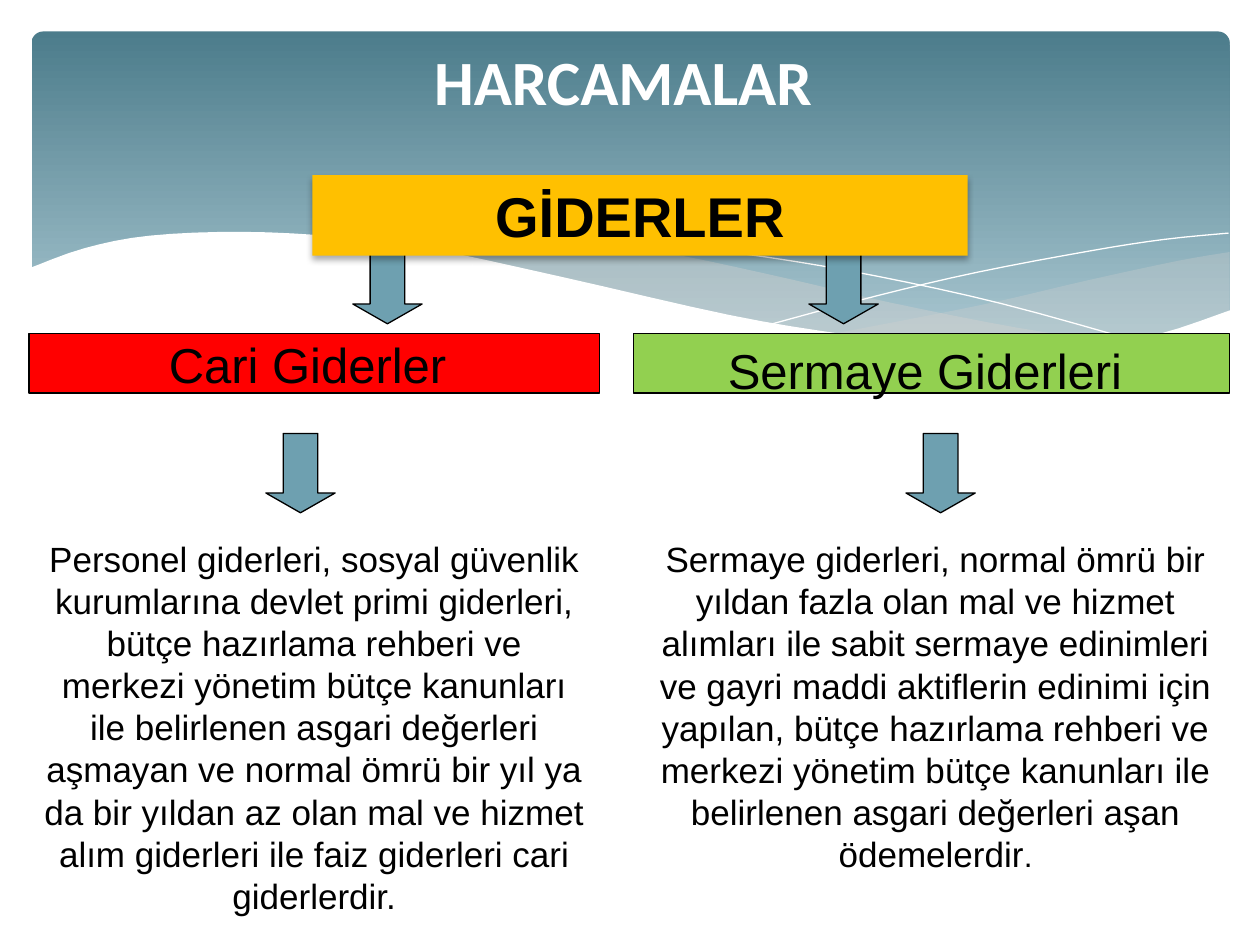
from dataclasses import dataclass

from lxml import etree
from pptx import Presentation
from pptx.dml.color import RGBColor
from pptx.enum.shapes import MSO_SHAPE
from pptx.enum.text import MSO_ANCHOR, PP_ALIGN
from pptx.oxml.ns import qn
from pptx.util import Inches, Pt

Point = tuple[float, float]
Area = tuple[float, float, float, float]


@dataclass(frozen=True)
class Theme:
    white: str = "FFFFFF"
    black: str = "000000"
    mist: str = "D4D2D0"
    dark: str = "4C7C8B"
    light: str = "A8C6D0"
    arrow: str = "6EA0B0"
    gold: str = "FFC000"
    red: str = "FF0000"
    green: str = "92D050"
    head: str = "Calibri"
    text: str = "Arial"
    title: float = 36
    banner: float = 32
    label: float = 28
    body: float = 20
    stop: float = 18
    line: float = 0.75


@dataclass(frozen=True)
class Wave:
    knots: list[Point]
    fill: str | None = None
    alpha: int = 100
    turn: int = 0  # knot index where the upper edge ends


@dataclass(frozen=True)
class Column:
    label: str
    box: Area
    fill: str
    anchor: MSO_ANCHOR
    body: str
    area: Area
    tail: str = ""


THEME = Theme()
ARROWS = [(2.11, 3.44), (7.19, 3.44), (2.8, 1.94), (6.42, 1.94)]
WAVES = [
    Wave([(9.76, 2), (9.35, 2.07), (8.61, 2.23), (7.79, 2.42), (6.61, 2.65),
          (7.32, 2.74), (8.03, 2.78), (8.63, 2.75), (9.21, 2.65), (9.76, 2.47)],
         THEME.mist, 29, 4),
    Wave([(8.93, 2.73), (8.07, 2.6), (7.06, 2.4), (6.29, 2.22), (5.41, 2.03),
          (4.65, 1.91), (3.8, 1.85), (2.86, 1.91), (3.62, 2.03), (4.49, 2.22),
          (5.66, 2.48), (6.65, 2.66), (7.48, 2.76), (8.18, 2.78), (8.93, 2.73)],
         THEME.mist, 40, 7),
    Wave([(3.09, 1.95), (3.63, 1.89), (4.33, 1.87), (5.1, 1.92), (6.08, 2.04),
          (6.95, 2.19), (7.95, 2.41), (9.07, 2.72)]),
    Wave([(6.13, 2.57), (6.95, 2.35), (7.76, 2.16), (8.66, 1.99), (9.24, 1.9), (9.75, 1.85)]),
    Wave([(9.77, 2.46), (9.2, 2.65), (8.63, 2.74), (8.09, 2.77), (7.44, 2.74),
          (6.68, 2.65), (5.79, 2.5), (4.47, 2.2), (3.4, 1.97), (2.71, 1.88),
          (1.93, 1.84), (1.19, 1.87), (0.67, 1.97), (0.23, 2.13), (0.23, 3.29), (9.77, 3.29)],
         THEME.white, 100, 13),
]
COLUMNS = [
    Column("Cari Giderler ", (0.23, 2.65, 4.53, 0.47), THEME.red, MSO_ANCHOR.MIDDLE,
           "Personel giderleri, sosyal güvenlik kurumlarına devlet primi giderleri, "
           "bütçe hazırlama rehberi ve merkezi yönetim bütçe kanunları ile belirlenen "
           "asgari değerleri aşmayan ve normal ömrü bir yıl ya da bir yıldan az olan mal "
           "ve hizmet alım giderleri ile faiz giderleri cari giderlerdir.",
           (0.23, 4.22, 4.53, 3.13)),
    Column("Sermaye Giderleri ", (5.03, 2.65, 4.73, 0.47), THEME.green, MSO_ANCHOR.TOP,
           "Sermaye giderleri, normal ömrü bir yıldan fazla olan mal ve hizmet alımları "
           "ile sabit sermaye edinimleri ve gayri maddi aktiflerin edinimi için yapılan, "
           "bütçe hazırlama rehberi ve merkezi yönetim bütçe kanunları ile belirlenen "
           "asgari değerleri aşan ödemelerdir",
           (5.08, 4.22, 4.69, 2.79), "."),
]


def rgb(code: str) -> RGBColor:
    return RGBColor.from_string(code)


def place(area: Area) -> list[int]:
    return [Inches(v) for v in area]


def write(shape, text: str, *, size: float, font: str = THEME.text, color: str = THEME.black,
          bold: bool = False, anchor: MSO_ANCHOR = MSO_ANCHOR.TOP) -> None:
    """Append a centred run to the shape's first paragraph."""
    frame = shape.text_frame
    frame.word_wrap = True
    frame.vertical_anchor = anchor
    para = frame.paragraphs[0]
    para.alignment = PP_ALIGN.CENTER
    run = para.add_run()
    run.text = text
    run.font.name, run.font.size, run.font.bold = font, Pt(size), bold
    run.font.color.rgb = rgb(color)


def paint(shape, fill: str | None, line: str | None = None, width: float = THEME.line) -> None:
    shape.shadow.inherit = False
    if fill:
        shape.fill.solid()
        shape.fill.fore_color.rgb = rgb(fill)
    else:
        shape.fill.background()
    if line:
        shape.line.color.rgb = rgb(line)
        shape.line.width = Pt(width)
    else:
        shape.line.fill.background()


def box(slide, kind: MSO_SHAPE, area: Area, fill: str, line: str | None = None):
    shape = slide.shapes.add_shape(kind, *place(area))
    paint(shape, fill, line)
    return shape


def smooth(knots: list[Point], steps: int = 4) -> list[Point]:
    """Return points of a Catmull-Rom curve through the knots."""
    ends = [knots[0], *knots, knots[-1]]
    out = [knots[0]]
    for a, b, c, d in zip(ends, ends[1:], ends[2:], ends[3:]):
        for t in (n / steps for n in range(1, steps + 1)):
            out.append(tuple(
                (2 * q + (r - p) * t + (2 * p - 5 * q + 4 * r - s) * t**2
                 + (3 * q - p - 3 * r + s) * t**3) / 2
                for p, q, r, s in zip(a, b, c, d)))
    return out


def draw_wave(slide, wave: Wave) -> None:
    if wave.fill == THEME.white:
        points = smooth(wave.knots[:wave.turn + 1]) + wave.knots[wave.turn + 1:]
    elif wave.fill:
        points = smooth(wave.knots[:wave.turn + 1]) + smooth(wave.knots[wave.turn:])
    else:
        points = smooth(wave.knots)
    start, *rest = [(Inches(x), Inches(y)) for x, y in points]
    path = slide.shapes.build_freeform(*start)
    path.add_line_segments(rest, close=bool(wave.fill))
    shape = path.convert_to_shape()
    paint(shape, wave.fill, None if wave.fill else THEME.white, 0)
    if wave.alpha < 100:
        color = shape._element.spPr.find(f"{qn('a:solidFill')}/{qn('a:srgbClr')}")
        etree.SubElement(color, qn("a:alpha"), val=str(wave.alpha * 1000))


def draw_panel(slide) -> None:
    panel = box(slide, MSO_SHAPE.ROUNDED_RECTANGLE, (0.25, 0.25, 9.51, 2.7), THEME.dark)
    panel.adjustments[0] = 0.034
    panel.fill.gradient()
    panel.fill.gradient_angle = 270
    for stop, color, spot in zip(panel.fill.gradient_stops, (THEME.dark, THEME.light), (0, 0.9)):
        stop.color.rgb = rgb(color)
        stop.position = spot


def draw_arrow(slide, spot: Point) -> None:
    arrow = box(slide, MSO_SHAPE.DOWN_ARROW, (*spot, 0.55, 0.63), THEME.arrow, THEME.black)
    arrow.adjustments[1] = 0.285


def draw_column(slide, col: Column) -> None:
    label = box(slide, MSO_SHAPE.RECTANGLE, col.box, col.fill, THEME.black)
    write(label, col.label, size=THEME.label, anchor=col.anchor)
    note = slide.shapes.add_textbox(*place(col.area))
    write(note, col.body, size=THEME.body)
    if col.tail:
        write(note, col.tail, size=THEME.stop)


def cast(shape) -> None:
    """Give the shape a soft shadow straight below it."""
    effects = shape._element.spPr.find(qn("a:effectLst"))
    shade = etree.SubElement(effects, qn("a:outerShdw"), blurRad=str(Pt(3.5)),
                             dist=str(Pt(2.2)), dir="5400000", rotWithShape="0")
    color = etree.SubElement(shade, qn("a:srgbClr"), val=THEME.black)
    etree.SubElement(color, qn("a:alpha"), val="32000")


def main() -> None:
    deck = Presentation()
    deck.slide_width, deck.slide_height = Inches(10), Inches(7.5)
    slide = deck.slides.add_slide(deck.slide_layouts[5])
    draw_panel(slide)
    for wave in WAVES:
        draw_wave(slide, wave)
    for col in COLUMNS:
        draw_column(slide, col)
    title = slide.shapes.title
    title.left, title.top, title.width, title.height = place((0.75, 0.36, 8.39, 0.55))
    write(title, "HARCAMALAR", size=THEME.title, font=THEME.head, color=THEME.white,
          bold=True, anchor=MSO_ANCHOR.MIDDLE)
    slide.shapes._spTree.append(title._element)  # bring in front of the panel
    for spot in ARROWS:
        draw_arrow(slide, spot)
    banner = box(slide, MSO_SHAPE.RECTANGLE, (2.48, 1.39, 5.2, 0.64), THEME.gold)
    write(banner, "GİDERLER", size=THEME.banner, bold=True)
    cast(banner)
    deck.save("out.pptx")


if __name__ == "__main__":
    main()
